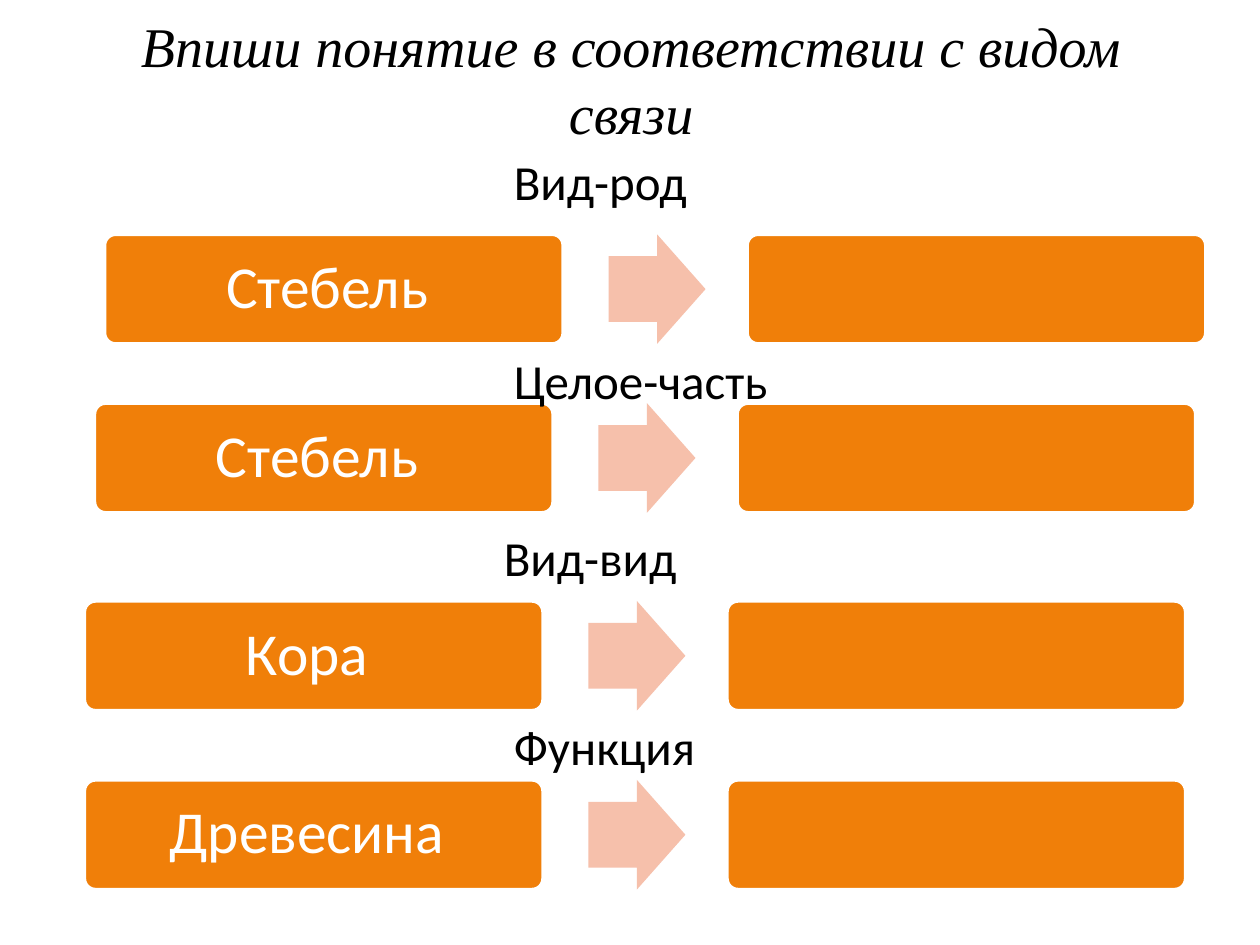
from dataclasses import dataclass

from pptx import Presentation
from pptx.dml.color import RGBColor
from pptx.enum.shapes import MSO_SHAPE
from pptx.enum.text import MSO_ANCHOR, PP_ALIGN
from pptx.util import Inches, Pt

ROUND, ARROW = MSO_SHAPE.ROUNDED_RECTANGLE, MSO_SHAPE.RIGHT_ARROW
LEFT, CENTER = PP_ALIGN.LEFT, PP_ALIGN.CENTER
TOP, MIDDLE = MSO_ANCHOR.TOP, MSO_ANCHOR.MIDDLE


@dataclass(frozen=True)
class Theme:
    orange: RGBColor = RGBColor(0xF0, 0x7F, 0x09)
    peach: RGBColor = RGBColor(0xF6, 0xC0, 0xAB)
    white: RGBColor = RGBColor(0xFF, 0xFF, 0xFF)
    black: RGBColor = RGBColor(0, 0, 0)
    serif: str = "Times New Roman"
    sans: str = "Calibri"
    title: int = 32
    term: int = 34
    label: int = 28


THEME = Theme()

# Row left, row top, term, label left, label top, label
ROWS = [
    (0.83, 1.86, "Стебель ", 3.98, 1.15, "Вид-род"),
    (0.75, 3.2, "Стебель ", 3.98, 2.73, "Целое-часть"),
    (0.67, 4.77, "Кора ", 3.9, 4.14, "Вид-вид"),
    (0.67, 6.19, "Древесина ", 3.98, 5.64, "Функция"),
]


def write(shape, text, size, color=THEME.black, font=THEME.sans, italic=False,
          align=LEFT, anchor=TOP, inset=None, spacing=None):
    frame = shape.text_frame
    frame.word_wrap = True
    frame.vertical_anchor = anchor
    if inset is not None:
        frame.margin_left = frame.margin_right = Inches(inset)
        frame.margin_top = frame.margin_bottom = Inches(inset)
    para = frame.paragraphs[0]
    para.alignment = align
    if spacing:
        para.line_spacing = spacing
    run = para.add_run()
    run.text = text
    run.font.name = font
    run.font.size = Pt(size)
    run.font.italic = italic
    run.font.color.rgb = color


def add_text(slide, box, text, size, **style):
    shape = slide.shapes.add_textbox(*map(Inches, box))
    write(shape, text, size, **style)


def add_form(slide, kind, box, fill, adjust, line=None):
    shape = slide.shapes.add_shape(kind, *map(Inches, box))
    shape.shadow.inherit = False
    for i, value in enumerate(adjust):
        shape.adjustments[i] = value
    shape.fill.solid()
    shape.fill.fore_color.rgb = fill
    if line:
        shape.line.color.rgb = line
        shape.line.width = Pt(2)
    else:
        shape.line.fill.background()
    return shape


def add_title(slide, box):
    add_text(slide, box, "Впиши понятие в соответствии с видом связи",
             THEME.title, font=THEME.serif, italic=True,
             align=CENTER, anchor=MIDDLE)


def add_row(slide, box, term):
    """Place a filled card, an arrow and a card left empty for the answer."""
    left, top, width, height = box
    card = 3.64
    cards = [
        add_form(slide, ROUND, (x, top, card, height), THEME.orange, [0.1],
                 line=THEME.white)
        for x in (left, left + width - card)
    ]
    write(cards[0], term, THEME.term, color=THEME.white, align=CENTER,
          anchor=MIDDLE, inset=0.17, spacing=0.9)
    add_form(slide, ARROW, (left + 4, top, 0.77, height), THEME.peach,
             [0.6, 0.5])


def main():
    deck = Presentation()
    deck.slide_width, deck.slide_height = Inches(10), Inches(7.5)
    slide = deck.slides.add_slide(deck.slide_layouts[6])

    # Heading
    add_title(slide, (0.51, 0, 9, 1.25))

    # Rows of terms
    for left, top, term, *_ in ROWS:
        add_row(slide, (left, top, 8.74, 0.87), term)

    # Kinds of link, above the rows
    for *_, left, top, label in ROWS:
        add_text(slide, (left, top, 2.44, 0.57), label, THEME.label)

    deck.save("out.pptx")


if __name__ == "__main__":
    main()
